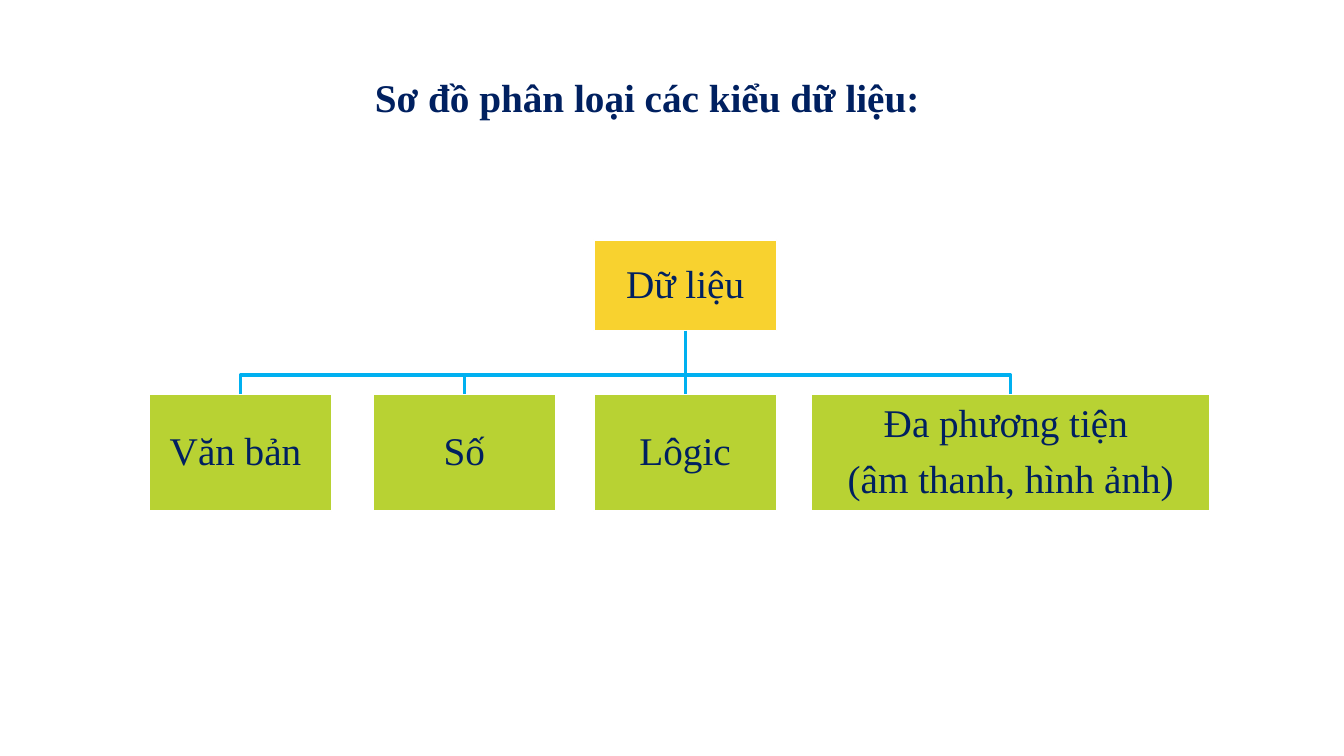
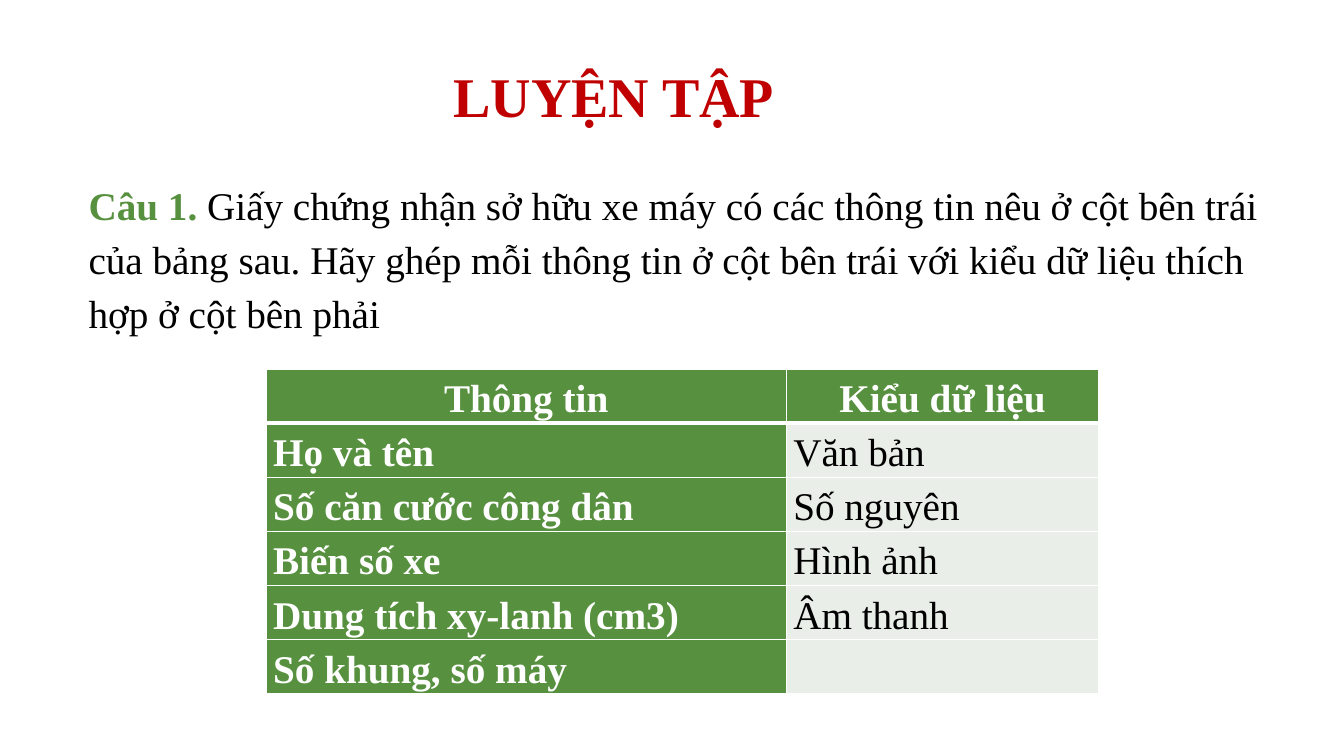
from lxml import etree
from pptx import Presentation
from pptx import util as u
from pptx.dml.color import RGBColor
from pptx.enum import shapes, text
from pptx.oxml.ns import qn

WIDTH, HEIGHT = u.Inches(13.33), u.Inches(7.5)
FONT = "Times New Roman"
BODY, HEADING = 28, 40
NAVY, RED, BLACK, WHITE = "002060", "C00000", "000000", "FFFFFF"
GREEN, PALE = "57903F", "EAEEE8"
YELLOW, LIME, BLUE = "F8D22F", "B8D233", "00B0F0"
CENTER = text.PP_ALIGN.CENTER
MIDDLE = text.MSO_ANCHOR.MIDDLE


def rgb(value):
    return RGBColor.from_string(value)


def col(share):
    """Percent of the slide's width."""
    return round(WIDTH * share / 100)


def row(share):
    """Percent of the slide's height."""
    return round(HEIGHT * share / 100)


def area(left, top, width, height):
    return col(left), row(top), col(width), row(height)


def add_run(p, words, color, bold=False, size=BODY):
    r = p.add_run()
    r.text = words
    r.font.name, r.font.size, r.font.bold = FONT, u.Pt(size), bold
    r.font.color.rgb = rgb(color)


def add_text(slide, place, runs, align=None, spacing=1.0, anchor=text.MSO_ANCHOR.TOP):
    """Each run is (words, colour, bold, size)."""
    tf = slide.shapes.add_textbox(*place).text_frame
    tf.word_wrap = True
    tf.vertical_anchor = anchor
    p = tf.paragraphs[0]
    p.alignment, p.line_spacing = align, spacing
    for run in runs:
        add_run(p, *run)


def add_node(slide, place, lines, fill):
    sp = slide.shapes.add_shape(shapes.MSO_SHAPE.RECTANGLE, *place)
    sp.shadow.inherit = False
    sp.fill.solid()
    sp.fill.fore_color.rgb = rgb(fill)
    sp.line.color.rgb = rgb(WHITE)
    sp.line.width = u.Pt(1)
    tf = sp.text_frame
    tf.word_wrap = True
    tf.vertical_anchor = MIDDLE
    tf.margin_left = tf.margin_right = tf.margin_top = tf.margin_bottom = u.Inches(0.02)
    for i, words in enumerate(lines):
        p = tf.add_paragraph() if i else tf.paragraphs[0]
        p.alignment, p.line_spacing, p.space_after = CENTER, 0.9, u.Pt(10)
        add_run(p, words, NAVY)
    return sp


def style_link(sp):
    sp.line.color.rgb = rgb(BLUE)
    sp.line.width = u.Pt(2.25)


def add_trunk(slide, root, child):
    sp = slide.shapes.add_connector(shapes.MSO_CONNECTOR.STRAIGHT, 0, 0, 0, 0)
    sp.begin_connect(root, 2)
    sp.end_connect(child, 0)
    style_link(sp)
    etree.SubElement(sp._element.spPr, qn("a:effectLst"))


def add_branch(slide, root, child, bend):
    """Run sideways from below the root, then down to the child."""
    start = root.left + root.width // 2
    end = child.left + child.width // 2
    builder = slide.shapes.build_freeform(start, bend)
    builder.add_line_segments([(end, bend), (end, child.top)], close=False)
    sp = builder.convert_to_shape()
    sp.shadow.inherit = False
    sp.fill.background()
    style_link(sp)


def set_borders(cell, **widths):
    tc_pr = cell._tc.get_or_add_tcPr()
    for side in "LRTB":
        width = u.Pt(widths.get(side, 1))
        line = etree.SubElement(tc_pr, qn("a:ln" + side), w=str(width))
        fill = etree.SubElement(line, qn("a:solidFill"))
        etree.SubElement(fill, qn("a:srgbClr"), val=WHITE)


def fill_cell(cell, words, header, label, borders):
    set_borders(cell, **borders)
    cell.fill.solid()
    cell.fill.fore_color.rgb = rgb(GREEN if label else PALE)
    cell.vertical_anchor = MIDDLE
    cell.margin_left = cell.margin_right = u.Inches(0.07)
    cell.margin_top = cell.margin_bottom = 0
    p = cell.text_frame.paragraphs[0]
    p.line_spacing = 1.15
    p.alignment = CENTER if header else None
    if words:
        add_run(p, words, WHITE if label else BLACK, label)


def add_grid(slide, left, top, widths, row_height, rows):
    place = area(left, top, sum(widths), row_height * len(rows))
    table = slide.shapes.add_table(len(rows), len(widths), *place).table
    table.horz_banding = False
    for column, width in zip(table.columns, widths):
        column.width = col(width)
    rules = {0: {"B": 3}, 1: {"T": 3}}
    for i, values in enumerate(rows):
        for j, words in enumerate(values):
            fill_cell(table.cell(i, j), words, i == 0, i == 0 or j == 0, rules.get(i, {}))


def build_tree(slide):
    add_text(slide, area(27.16, 9.07, 45, 7.6),
             [("Sơ đồ phân loại các kiểu dữ liệu:", NAVY, True)])
    middle, narrow, wide = 44.19, 13.58, 29.63
    root = add_node(slide, area(middle, 31.75, narrow, 12), ["Dữ liệu"], YELLOW)
    kinds = [
        (11.1, narrow, ["Văn bản "]),
        (27.76, narrow, ["Số"]),
        (middle, narrow, ["Lôgic"]),
        (60.39, wide, ["Đa phương tiện ", "(âm thanh, hình ảnh)"]),
    ]
    for left, width, lines in kinds:
        child = add_node(slide, area(left, 52.13, width, 15.47), lines, LIME)
        if left == middle:
            add_trunk(slide, root, child)
        else:
            add_branch(slide, root, child, row(49.6))


def build_exercise(slide):
    add_text(slide, area(4.43, 8, 82.5, 10.4), [("LUYỆN TẬP", RED, True, HEADING)],
             CENTER, 0.9, MIDDLE)
    question = ("Giấy chứng nhận sở hữu xe máy có các thông tin nêu ở cột bên trái "
                "của bảng sau. Hãy ghép mỗi thông tin ở cột bên trái với kiểu dữ liệu "
                "thích hợp ở cột bên phải")
    add_text(slide, area(5.85, 22.4, 89.8, 23.07),
             [("Câu 1. ", GREEN, True), (question, BLACK)], spacing=1.15)
    add_grid(slide, 19.8, 48.8, (38.7, 23.26), 6.58, [
        ("Thông tin", "Kiểu dữ liệu"),
        ("Họ và tên", "Văn bản"),
        ("Số căn cước công dân", "Số nguyên"),
        ("Biến số xe", "Hình ảnh"),
        ("Dung tích xy-lanh (cm3)", "Âm thanh"),
        ("Số khung, số máy", ""),
    ])


def main():
    prs = Presentation()
    prs.slide_width, prs.slide_height = WIDTH, HEIGHT
    for build in (build_tree, build_exercise):
        build(prs.slides.add_slide(prs.slide_layouts[6]))
    prs.save("out.pptx")


if __name__ == "__main__":
    main()
